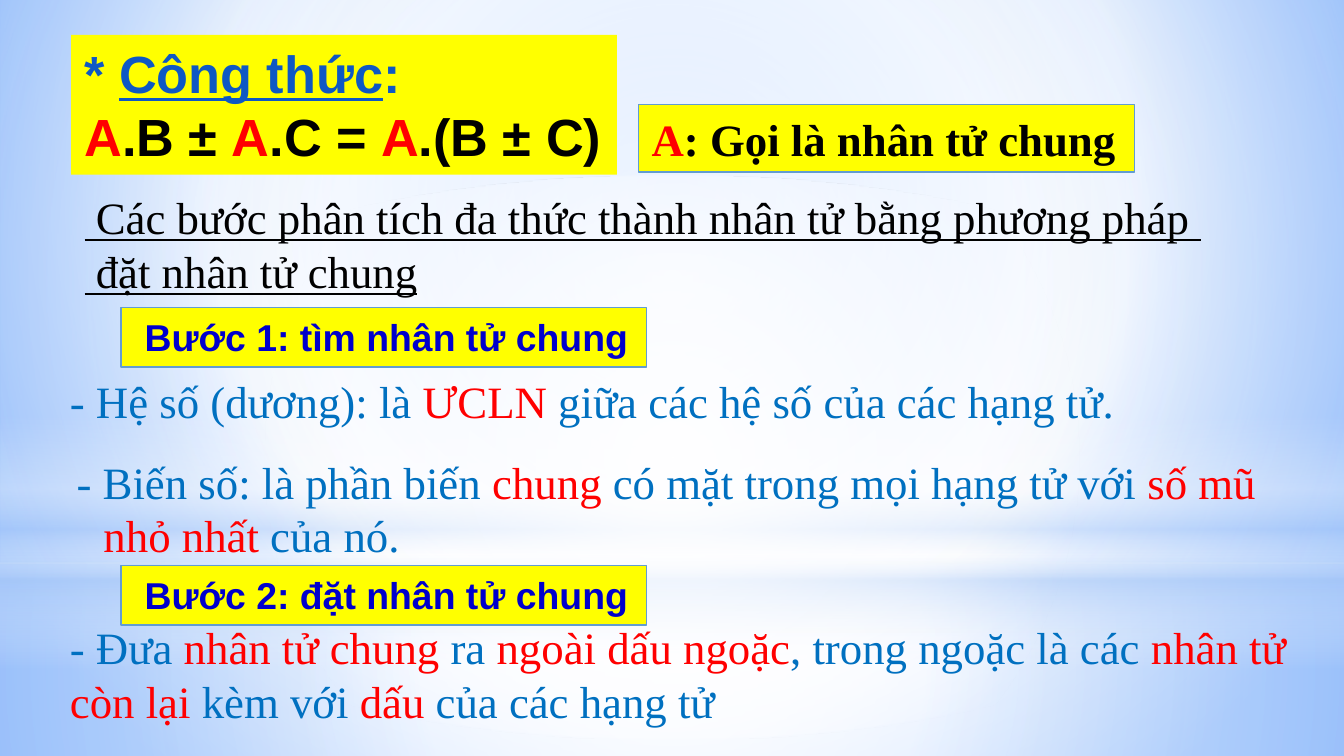
from dataclasses import dataclass

import pptx
import pptx.dml.color
import pptx.enum.shapes
import pptx.enum.text
import pptx.oxml
import pptx.oxml.ns
import pptx.util
from lxml import etree

Inches = pptx.util.Inches
Pt = pptx.util.Pt
RGB = pptx.dml.color.RGBColor.from_string
qn = pptx.oxml.ns.qn
SHAPE = pptx.enum.shapes.MSO_SHAPE
ANCHOR = pptx.enum.text.MSO_ANCHOR
AUTOSIZE = pptx.enum.text.MSO_AUTO_SIZE
ALIGN = pptx.enum.text.PP_ALIGN


@dataclass(frozen=True)
class Theme:
    sans: str = "Arial"
    serif: str = "Times New Roman"
    black: str = "000000"
    red: str = "FF0000"
    body: str = "0070C0"
    heading: str = "0E58C4"
    step: str = "0000CC"
    box: str = "FFFF00"
    outline: str = "629DD1"
    white: str = "FFFFFF"
    haze: str = "ACCBF9"
    sky: str = "95C0FF"
    deep_sky: str = "5599FF"
    formula_size: int = 28
    text_size: int = 24
    step_size: int = 20


T = Theme()


def set_gradient(parent, stops, focus=None):
    grad = etree.Element(qn("a:gradFill"), rotWithShape="1")
    gs_lst = etree.SubElement(grad, qn("a:gsLst"))
    for pos, color, opacity in stops:
        gs = etree.SubElement(gs_lst, qn("a:gs"), pos=str(pos * 1000))
        clr = etree.SubElement(gs, qn("a:srgbClr"), val=color)
        if opacity < 100:
            etree.SubElement(clr, qn("a:alpha"), val=str(opacity * 1000))
    if focus:
        path = etree.SubElement(grad, qn("a:path"), path="circle")
        rect = {side: str(v * 1000) for side, v in zip("ltrb", focus)}
        etree.SubElement(path, qn("a:fillToRect"), **rect)
    else:
        etree.SubElement(grad, qn("a:lin"), ang="5400000", scaled="0")
    solid = parent.find(qn("a:solidFill"))
    parent.replace(solid, grad)


def set_background(s):
    s.background.fill.solid()
    bg = s._element.xpath(".//p:bgPr")[0]
    stops = [(0, T.sky, 100), (60, T.white, 100), (100, T.deep_sky, 100)]
    set_gradient(bg, stops, (20, 10, 20, 60))


def add_glow(s, layer, kind, box, stops, focus=None):
    sp = s.shapes.add_shape(kind, *map(Inches, box))
    sp.shadow.inherit = False
    sp.line.fill.background()
    sp.fill.solid()
    set_gradient(sp._element.spPr, stops, focus)
    s.shapes._spTree.insert(2 + layer, sp._element)


def add_run(p, text, font, size, color, bold=False, underline=False):
    r = p.add_run()
    r.text = text
    r.font.name, r.font.size = font, Pt(size)
    r.font.bold, r.font.underline = bold, underline
    r.font.color.rgb = RGB(color)


def add_marked(p, marked, font, size, color, bold=False):
    for i, part in enumerate(marked.split("|")):
        if part:
            add_run(p, part, font, size, T.red if i % 2 else color, bold)


def add_box(s, box, outlined=True):
    sp = s.shapes.add_shape(SHAPE.RECTANGLE, *map(Inches, box))
    sp.shadow.inherit = False
    sp.fill.solid()
    sp.fill.fore_color.rgb = RGB(T.box)
    if outlined:
        sp.line.color.rgb = RGB(T.outline)
        sp.line.width = Pt(0.75)
    else:
        sp.line.fill.background()
    tf = sp.text_frame
    tf.word_wrap = False
    tf.auto_size = AUTOSIZE.SHAPE_TO_FIT_TEXT
    tf.vertical_anchor = ANCHOR.TOP
    p = tf.paragraphs[0]
    p.alignment = ALIGN.LEFT
    return tf, p


def place_text(ph, box, anchor):
    ph.left, ph.top, ph.width, ph.height = map(Inches, box)
    tf = ph.text_frame
    tf.word_wrap = True
    tf.auto_size = AUTOSIZE.NONE
    tf.vertical_anchor = anchor
    p = tf.paragraphs[0]
    p.alignment = ALIGN.LEFT
    p.space_before = Pt(0)
    return p


def fill_title(ph, box, lines):
    p = place_text(ph, box, ANCHOR.MIDDLE)
    for i, line in enumerate(lines):
        if i:
            p.add_line_break()
        add_run(p, line, T.serif, T.text_size, T.black, underline=True)


def fill_body(ph, box, marked, anchor=ANCHOR.MIDDLE, margin=0, indent=0):
    p = place_text(ph, box, anchor)
    pPr = p._p.get_or_add_pPr()
    pPr.set("marL", str(Inches(margin)))
    pPr.set("indent", str(Inches(indent)))
    etree.SubElement(pPr, qn("a:buNone"))
    add_marked(p, marked, T.serif, T.text_size, T.body)


def add_formula(s):
    tf, p = add_box(s, (0.53, 0.26, 4.06, 1.04), outlined=False)
    for text, underline in (("* ", False), ("Công thức", True), (":", False)):
        add_run(p, text, T.sans, T.formula_size, T.heading, True, underline)
    p = tf.add_paragraph()
    p.alignment = ALIGN.LEFT
    add_marked(p, "|A|.B ± |A|.C = |A|.(B ± C)", T.sans, T.formula_size, T.black, True)


def add_backdrop(s):
    set_background(s)
    center = (50, 50, 50, 50)
    w, h = T.white, T.haze
    glows = [
        (SHAPE.RECTANGLE, (0, 4.19, 10, 1.44), [(0, w, 91), (37, w, 76), (100, h, 79)], center),
        (SHAPE.RECTANGLE, (0, 0, 10, 4.19), [(0, w, 89), (48, w, 62), (100, h, 79)], center),
        (SHAPE.RECTANGLE, (0, 3.09, 10, 1.88),
         [(0, w, 0), (29, w, 30), (45, h, 40), (55, w, 26), (65, h, 60), (100, w, 0)], None),
        (SHAPE.OVAL, (0, 1.31, 10, 4.19), [(0, w, 100), (56, w, 0)], center),
    ]
    for layer, glow in enumerate(glows):
        add_glow(s, layer, *glow)


def main():
    prs = pptx.Presentation()
    prs.slide_width = Inches(10)
    prs.slide_height = prs.slide_width * 9 // 16
    s = prs.slides.add_slide(prs.slide_layouts[4])
    title, factor, variable, grouping, spare = s.placeholders
    spare._element.getparent().remove(spare._element)
    add_backdrop(s)

    fill_title(title, (0.53, 1.48, 8.86, 0.67),
               [" Các bước phân tích đa thức thành nhân tử bằng phương pháp ", " đặt nhân tử chung"])
    fill_body(factor, (0.42, 2.8, 8.64, 0.36),
              "- Hệ số (dương): là |ƯCLN| giữa các hệ số của các hạng tử.")
    fill_body(variable, (0.42, 3.33, 9.42, 0.9),
              "- Biến số: là phần biến |chung |có mặt trong mọi hạng tử với |số mũ nhỏ nhất |của nó.",
              ANCHOR.TOP, 0.25, -0.2)
    fill_body(grouping, (0.42, 4.63, 9.42, 0.76),
              "- Đưa |nhân tử chung |ra |ngoài dấu ngoặc|, trong ngoặc là các "
              "|nhân tử còn lại |kèm với |dấu |của các hạng tử")

    add_formula(s)
    _, p = add_box(s, (4.75, 0.78, 3.69, 0.5))
    add_marked(p, "|A|: Gọi là nhân tử chung", T.serif, T.text_size, T.black, True)
    steps = ((2.29, " Bước 1: tìm nhân tử chung"), (4.21, " Bước 2: đặt nhân tử chung"))
    for top, text in steps:
        _, p = add_box(s, (0.9, top, 3.91, 0.44))
        add_run(p, text, T.sans, T.step_size, T.step, True)
    prs.save("out.pptx")


if __name__ == "__main__":
    main()
